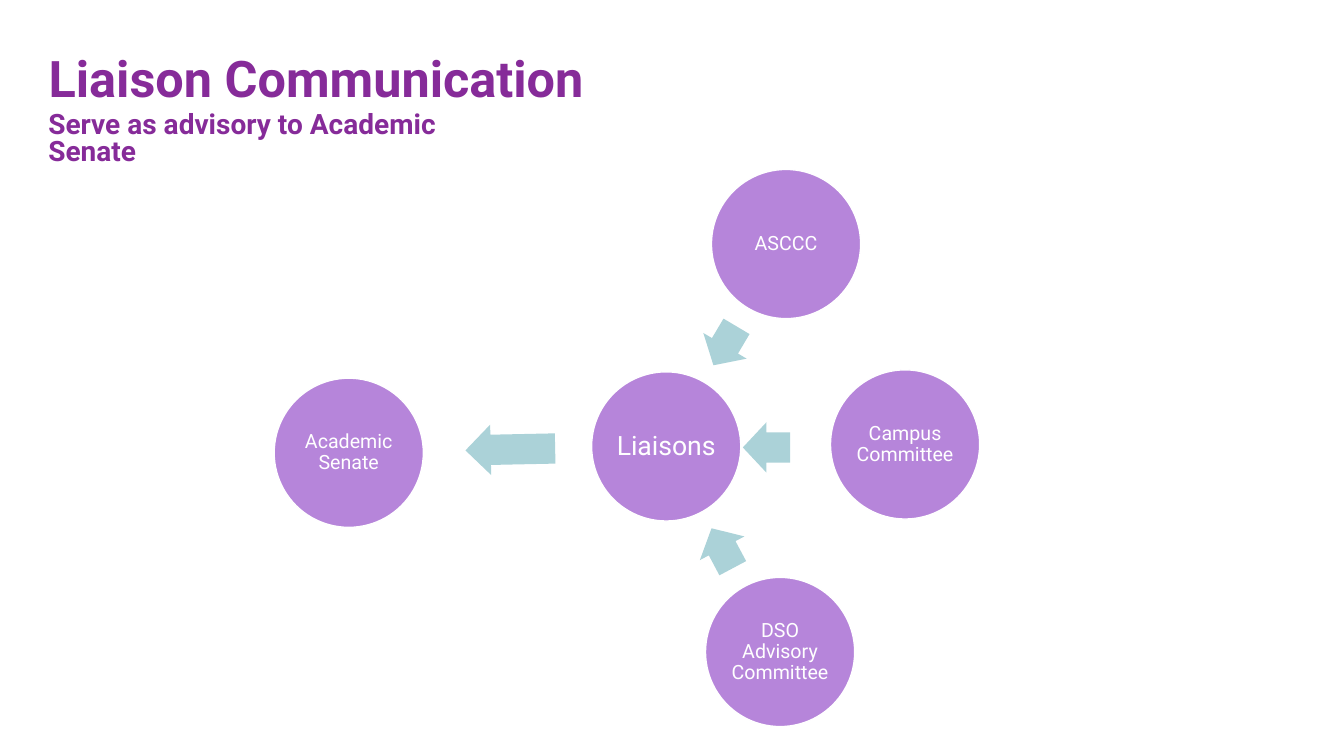
from dataclasses import dataclass

import pptx
import pptx.dml.color
import pptx.enum.shapes
import pptx.enum.text
import pptx.util

Cm = pptx.util.Cm
Pt = pptx.util.Pt
ShapeKind = pptx.enum.shapes.MSO_SHAPE
Anchor = pptx.enum.text.MSO_ANCHOR
Align = pptx.enum.text.PP_ALIGN

COLORS = {"heading": "862B99", "group": "B685DA", "flow": "ABD2D8", "white": "FFFFFF"}
FONT = "Roboto"
GROUP_DIAMETER = 3.76
FLOW_HEIGHT = 1.27


@dataclass(frozen=True)
class Group:
    label: str
    left: float
    top: float
    size: int = 14
    inset: float = 0.05


@dataclass(frozen=True)
class Flow:
    left: float
    top: float
    length: float
    rotation: float


GROUPS = [
    Group("Liaisons", 14.91, 9.37, size=19, inset=0.08),
    Group("Academic Senate", 6.91, 9.53),
    Group("ASCCC", 17.93, 4.27),
    Group("DSO Advisory Committee", 17.78, 14.55),
    Group("Campus Committee", 20.93, 9.32),
]
FLOWS = [
    Flow(11.73, 10.69, 2.26, 178.8),
    Flow(17.7, 8.08, 1.14, 120.7),
    Flow(17.63, 13.18, 1.14, 242),
    Flow(18.72, 10.64, 1.19, 180),
]


def rgb(name: str) -> pptx.dml.color.RGBColor:
    return pptx.dml.color.RGBColor.from_string(COLORS[name])


def write(frame, text: str, size: int, color: str, bold: bool, align, spacing: float):
    frame.text = text
    frame.word_wrap = True
    frame.auto_size = pptx.enum.text.MSO_AUTO_SIZE.NONE
    paragraph = frame.paragraphs[0]
    paragraph.alignment = align
    paragraph.line_spacing = spacing
    font = paragraph.runs[0].font
    font.name = FONT
    font.size = Pt(size)
    font.bold = bold
    font.color.rgb = rgb(color)
    return paragraph


def draw_group(slide, group: Group) -> None:
    circle = slide.shapes.add_shape(
        ShapeKind.OVAL, Cm(group.left), Cm(group.top), Cm(GROUP_DIAMETER), Cm(GROUP_DIAMETER)
    )
    circle.shadow.inherit = False
    circle.fill.solid()
    circle.fill.fore_color.rgb = rgb("group")
    circle.line.color.rgb = rgb("white")
    circle.line.width = Pt(1)
    frame = circle.text_frame
    frame.margin_left = frame.margin_right = Cm(group.inset)
    frame.margin_top = frame.margin_bottom = Cm(group.inset)
    frame.vertical_anchor = Anchor.MIDDLE
    write(frame, group.label, group.size, "white", False, Align.CENTER, 0.9)


def draw_flow(slide, flow: Flow) -> None:
    arrow = slide.shapes.add_shape(
        ShapeKind.RIGHT_ARROW, Cm(flow.left), Cm(flow.top), Cm(flow.length), Cm(FLOW_HEIGHT)
    )
    arrow.adjustments[0] = 0.6
    arrow.adjustments[1] = 0.5
    arrow.rotation = flow.rotation
    arrow.shadow.inherit = False
    arrow.fill.solid()
    arrow.fill.fore_color.rgb = rgb("flow")
    arrow.line.fill.background()


def draw_headings(slide) -> None:
    title = slide.shapes.title
    title.left, title.top, title.width, title.height = Cm(0.97), Cm(0.86), Cm(14.55), Cm(2.36)
    title.text_frame.vertical_anchor = Anchor.MIDDLE
    write(title.text_frame, "Liaison Communication", 36, "heading", True, Align.LEFT, 0.9)

    subtitle = slide.shapes.add_textbox(Cm(0.97), Cm(2.72), Cm(12.19), Cm(1.02))
    advisory = write(
        subtitle.text_frame, "Serve as advisory to Academic Senate",
        20, "heading", True, Align.LEFT, 0.8,
    )
    advisory.space_before = Pt(9)


def main() -> None:
    presentation = pptx.Presentation()
    presentation.slide_width = Cm(33.87)
    presentation.slide_height = Cm(19.05)
    slide = presentation.slides.add_slide(presentation.slide_layouts.get_by_name("Title Only"))
    draw_headings(slide)
    for group in GROUPS:
        draw_group(slide, group)
    for flow in FLOWS:
        draw_flow(slide, flow)
    presentation.save("out.pptx")


if __name__ == "__main__":
    main()
